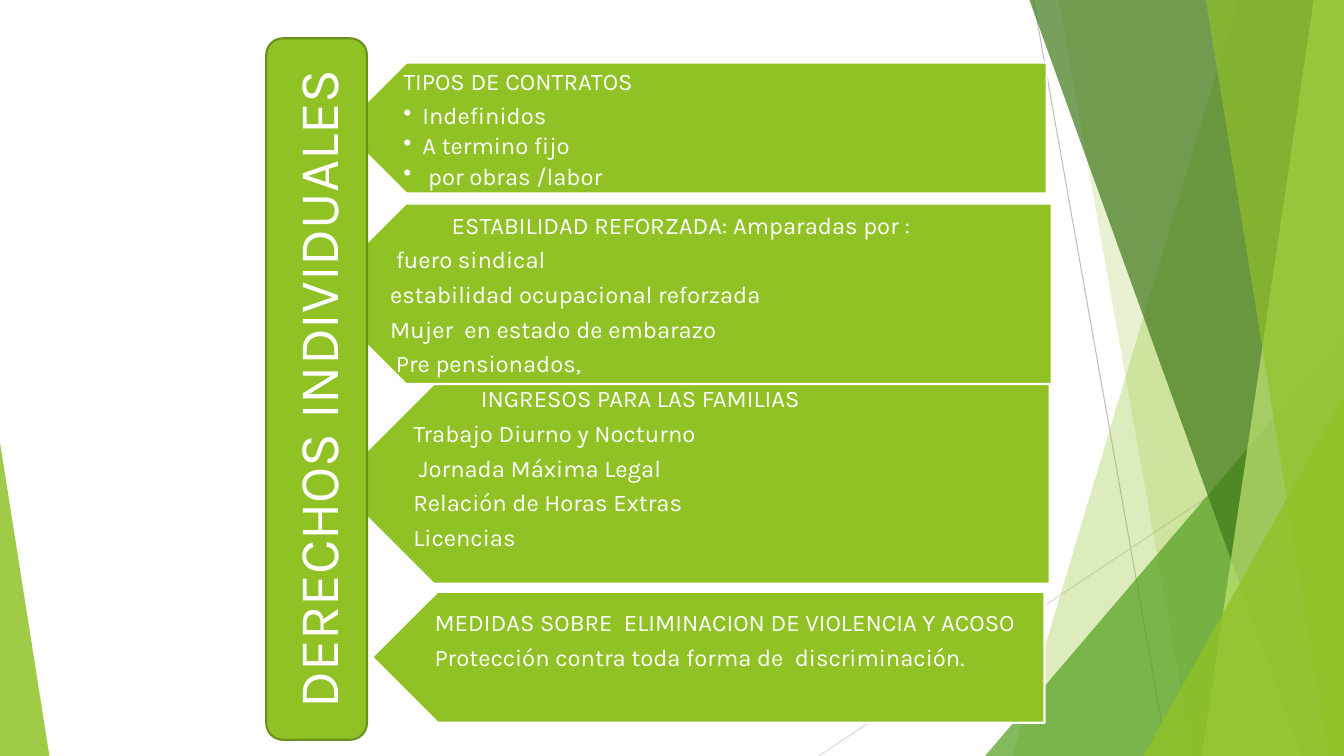
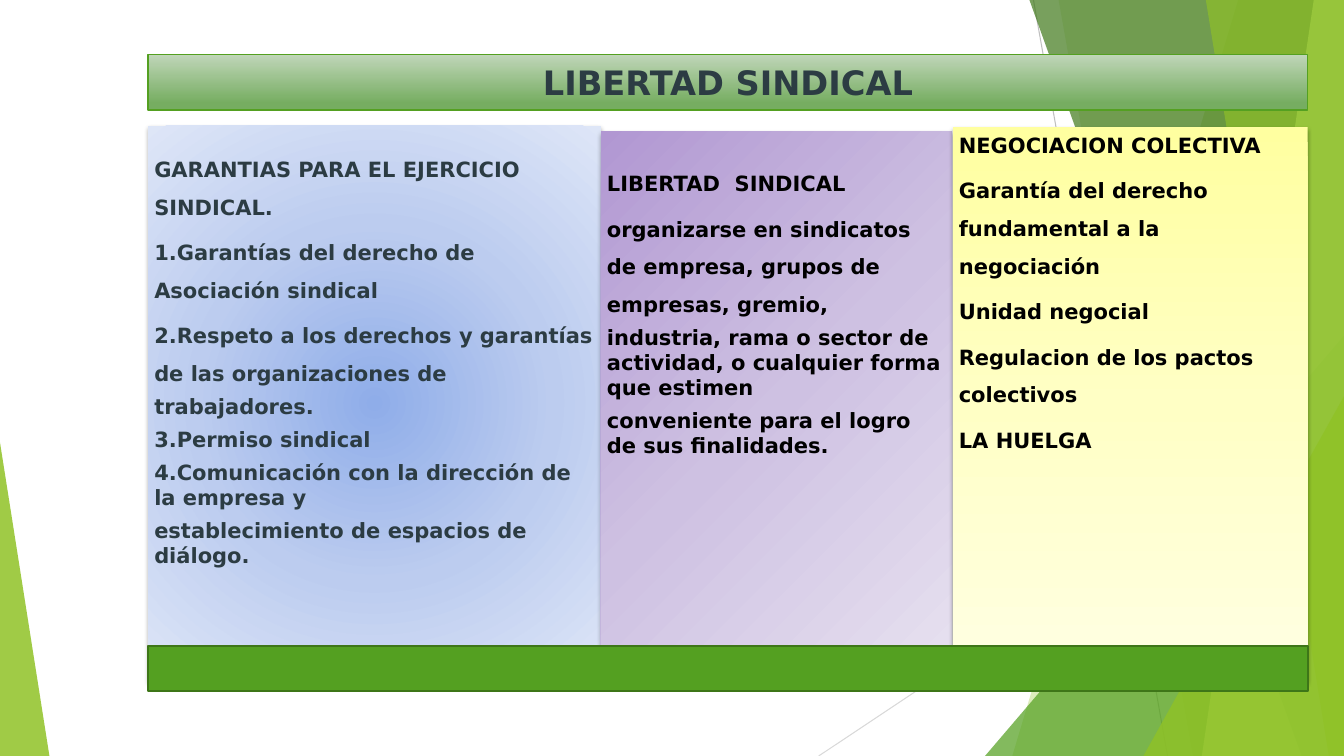
from dataclasses import dataclass
from typing import Optional

from lxml.etree import SubElement
from pptx import Presentation
from pptx.dml.color import RGBColor
from pptx.enum.shapes import MSO_CONNECTOR, MSO_SHAPE
from pptx.enum.text import MSO_ANCHOR, PP_ALIGN
from pptx.oxml import parse_xml
from pptx.oxml.ns import nsdecls, qn
from pptx.util import Inches, Pt

WIDTH, HEIGHT = 13.33, 7.5
WHITE = RGBColor(0xFF, 0xFF, 0xFF)
BLACK = RGBColor(0x00, 0x00, 0x00)
SLATE = RGBColor(0x2C, 0x3C, 0x43)
LIME = RGBColor(0x90, 0xC2, 0x26)
LIME_EDGE = RGBColor(0x6B, 0x90, 0x1C)
PALE_LIME = RGBColor(0xC0, 0xE4, 0x74)
GREEN = RGBColor(0x54, 0xA0, 0x21)
GREEN_EDGE = RGBColor(0x3E, 0x76, 0x18)
FOREST = RGBColor(0x3F, 0x78, 0x19)
GREY = RGBColor(0xBF, 0xBF, 0xBF)
PALE_GREY = RGBColor(0xD9, 0xD9, 0xD9)
RADIAL = '<a:path path="circle"><a:fillToRect l="50000" t="50000" r="50000" b="50000"/></a:path>'


@dataclass(frozen=True)
class Facet:
    """Area from a slanted left edge to the right edge of the slide."""
    top_x: float
    bottom_x: float
    colour: RGBColor
    opacity: int


@dataclass(frozen=True)
class Corner:
    """Triangle standing on the bottom edge of the slide."""
    left: float
    top: float
    width: float
    apex: float
    colour: RGBColor
    opacity: int


@dataclass(frozen=True)
class Line:
    text: str
    spacing: float = 0.9
    indent: float = 0
    bullet: bool = False


@dataclass(frozen=True)
class TextStyle:
    font: str
    size: float
    colour: RGBColor
    bold: bool = False
    after: float = 0


@dataclass(frozen=True)
class Gradient:
    stops: tuple[tuple[int, str], ...]
    angle: Optional[int] = None


@dataclass(frozen=True)
class ArrowPanel:
    left: float
    top: float
    width: float
    height: float
    text_left: float
    text_top: float
    lines: tuple[Line, ...]


@dataclass(frozen=True)
class Column:
    left: float
    top: float
    width: float
    height: float
    text_top: float
    gradient: Gradient
    colour: RGBColor
    lines: tuple[Line, ...]


BACKDROP = (
    Facet(12.28, 10.04, LIME, 30),
    Facet(10.5, 11.83, LIME, 20),
    Corner(9.77, 3.33, 3.56, 1, GREEN, 72),
    Facet(10.21, 12.91, FOREST, 70),
    Facet(13.03, 11.92, PALE_LIME, 70),
    Facet(11.96, 13.18, LIME, 65),
    Corner(11.34, 3.93, 1.99, 1, LIME, 80),
    Corner(0, 4.39, 0.49, 0, LIME, 85),
)

PANELS = (
    ArrowPanel(3.38, 0.62, 7, 1.3, 3.71, 0.62, (
        Line("TIPOS DE CONTRATOS"),
        Line("Indefinidos", bullet=True),
        Line("A termino fijo", bullet=True),
        Line(" por obras /labor", bullet=True),
    )),
    ArrowPanel(3.13, 2.02, 7.3, 1.79, 3.58, 2.05, (
        Line("ESTABILIDAD REFORZADA: Amparadas por :", indent=0.61),
        Line(" fuero sindical"),
        Line("estabilidad ocupacional reforzada"),
        Line("Mujer  en estado de embarazo"),
        Line(" Pre pensionados,"),
    )),
    ArrowPanel(3.31, 3.81, 7.1, 1.98, 3.81, 3.77, (
        Line("INGRESOS PARA LAS FAMILIAS", indent=0.67),
        Line("Trabajo Diurno y Nocturno"),
        Line(" Jornada Máxima Legal"),
        Line("Relación de Horas Extras"),
        Line("Licencias"),
    )),
    ArrowPanel(3.69, 5.87, 6.67, 1.3, 4.02, 5.99, (
        Line("MEDIDAS SOBRE  ELIMINACION DE VIOLENCIA Y ACOSO"),
        Line("Protección contra toda forma de  discriminación."),
    )),
)

TITLE_GRADIENT = Gradient(((0, "C0D6B9"), (88, "76AD61")), 90)
COLUMNS = (
    Column(1.47, 1.25, 4.49, 5.5, 1.37,
           Gradient(((0, "8FADE9"), (50, "BCCCEF"), (100, "DEE6F7"))), SLATE, (
               Line("GARANTIAS PARA EL EJERCICIO SINDICAL.", 1.5),
               Line("1.Garantías del derecho de Asociación sindical", 1.5),
               Line("2.Respeto a los derechos y garantías de las organizaciones de", 1.5),
               Line("trabajadores.", 1),
               Line("3.Permiso sindical", 1),
               Line("4.Comunicación con la dirección de la empresa y", 1),
               Line("establecimiento de espacios de diálogo.", 1),
           )),
    Column(5.96, 1.3, 3.48, 5.41, 1.51,
           Gradient(((0, "B197D2"), (50, "CEC1E2"), (100, "E7E1F0")), 45), BLACK, (
               Line("LIBERTAD  SINDICAL", 1.5),
               Line("organizarse en sindicatos de empresa, grupos de empresas, gremio,", 1.5),
               Line("industria, rama o sector de actividad, o cualquier forma que estimen", 1),
               Line("conveniente para el logro de sus finalidades.", 1),
           )),
    Column(9.45, 1.26, 3.52, 5.49, 1.13,
           Gradient(((0, "FFFFA0"), (50, "FFFFC5"), (100, "FFFFE3")), 90), BLACK, (
               Line("NEGOCIACION COLECTIVA", 1.5),
               Line("Garantía del derecho fundamental a la negociación", 1.5),
               Line("Unidad negocial", 1.5),
               Line("Regulacion de los pactos colectivos", 1.5),
               Line("LA HUELGA", 1.5),
           )),
)

PANEL_STYLE = TextStyle("Karla", 17, WHITE, after=6.4)
BANNER_STYLE = TextStyle("Karla", 40, WHITE)
TITLE_STYLE = TextStyle("DejaVu Sans", 24, SLATE, bold=True)


def paint(shape, fill: RGBColor, edge: Optional[RGBColor] = None, weight: float = 1.5) -> None:
    shape.shadow.inherit = False
    shape.fill.solid()
    shape.fill.fore_color.rgb = fill
    if edge is None:
        shape.line.fill.background()
    else:
        shape.line.color.rgb = edge
        shape.line.width = Pt(weight)


def add_block(page, kind, left: float, top: float, width: float, height: float,
              fill: RGBColor, edge: Optional[RGBColor] = None, weight: float = 1.5):
    shape = page.shapes.add_shape(kind, Inches(left), Inches(top), Inches(width), Inches(height))
    paint(shape, fill, edge, weight)
    return shape


def set_opacity(shape, percent: int) -> None:
    colour = next(shape.element.iter(qn("a:srgbClr")))
    SubElement(colour, qn("a:alpha")).set("val", str(percent * 1000))


def set_gradient(shape, gradient: Gradient) -> None:
    stops = "".join(f'<a:gs pos="{place * 1000}"><a:srgbClr val="{colour}"/></a:gs>'
                    for place, colour in gradient.stops)
    course = RADIAL if gradient.angle is None else f'<a:lin ang="{gradient.angle * 60000}" scaled="0"/>'
    solid = next(shape.element.iter(qn("a:solidFill")))
    solid.getparent().replace(solid, parse_xml(
        f'<a:gradFill {nsdecls("a")}><a:gsLst>{stops}</a:gsLst>{course}</a:gradFill>'))


def add_shadow(shape) -> None:
    effects = next(shape.element.iter(qn("a:effectLst")))
    effects.append(parse_xml(
        f'<a:outerShdw {nsdecls("a")} blurRad="{Pt(3)}" dist="{Pt(2)}" dir="5400000" rotWithShape="0">'
        '<a:srgbClr val="000000"><a:alpha val="35000"/></a:srgbClr></a:outerShdw>'))


def style_para(para, style: TextStyle) -> None:
    for span in para.runs:
        span.font.name = style.font
        span.font.size = Pt(style.size)
        span.font.bold = style.bold
        span.font.color.rgb = style.colour


def set_label(shape, text: str, style: TextStyle) -> None:
    shape.text_frame.text = text
    shape.text_frame.vertical_anchor = MSO_ANCHOR.MIDDLE
    para = shape.text_frame.paragraphs[0]
    para.alignment = PP_ALIGN.CENTER
    style_para(para, style)


def add_lines(page, left: float, top: float, width: float, height: float,
              insets: tuple[float, float, float], lines: tuple[Line, ...], style: TextStyle) -> None:
    box = page.shapes.add_textbox(Inches(left), Inches(top), Inches(width), Inches(height))
    frame = box.text_frame
    frame.word_wrap = True
    frame.margin_left, frame.margin_right = Inches(insets[0]), Inches(insets[2])
    frame.margin_top = frame.margin_bottom = Inches(insets[1])
    for number, line in enumerate(lines):
        para = frame.add_paragraph() if number else frame.paragraphs[0]
        para.text = line.text
        para.line_spacing = line.spacing
        para.space_after = Pt(3.2 if line.bullet else style.after)
        style_para(para, style)
        properties = para._p.get_or_add_pPr()
        if line.bullet:
            properties.set("marL", str(Inches(0.19)))
            properties.set("indent", str(-Inches(0.19)))
            SubElement(properties, qn("a:buChar")).set("char", "•")
        elif line.indent:
            properties.set("marL", str(Inches(line.indent)))


def add_hairline(page, start: tuple[float, float], end: tuple[float, float], colour: RGBColor):
    line = page.shapes.add_connector(MSO_CONNECTOR.STRAIGHT, *map(Inches, start + end))
    line.line.color.rgb = colour
    line.line.width = Pt(0.75)
    SubElement(line.element.spPr, qn("a:effectLst"))
    return line


def add_facet(page, facet: Facet):
    builder = page.shapes.build_freeform(Inches(facet.top_x), 0, scale=1.0)
    corners = ((WIDTH, 0), (WIDTH, HEIGHT), (facet.bottom_x, HEIGHT))
    builder.add_line_segments([(Inches(x), Inches(y)) for x, y in corners], close=True)
    shape = builder.convert_to_shape()
    paint(shape, facet.colour)
    return shape


def add_corner(page, corner: Corner):
    shape = add_block(page, MSO_SHAPE.ISOSCELES_TRIANGLE, corner.left, corner.top,
                      corner.width, HEIGHT - corner.top, corner.colour)
    shape.adjustments[0] = corner.apex
    return shape


def move_backdrop_to_layout(page, layout) -> None:
    """Draw the shared backdrop once and keep it on the layout."""
    for placeholder in list(layout.placeholders):
        layout.shapes.element.remove(placeholder.element)
    parts = [add_hairline(page, (10.25, 0), (11.58, HEIGHT), GREY),
             add_hairline(page, (WIDTH, 4.03), (8.12, HEIGHT), PALE_GREY)]
    for piece in BACKDROP:
        shape = add_facet(page, piece) if isinstance(piece, Facet) else add_corner(page, piece)
        set_opacity(shape, piece.opacity)
        parts.append(shape)
    for part in parts:
        layout.shapes.element.append(part.element)


def build_rights(page) -> None:
    # Arrow panels
    for panel in PANELS:
        arrow = add_block(page, MSO_SHAPE.PENTAGON, panel.left, panel.top,
                          panel.width, panel.height, LIME, WHITE)
        arrow.rotation = 180
        text_width = panel.left + panel.width - panel.text_left
        add_lines(page, panel.text_left, panel.text_top, text_width, panel.height,
                  (0.29, 0.07, 0.13), panel.lines, PANEL_STYLE)
    # Vertical banner
    banner = add_block(page, MSO_SHAPE.ROUNDED_RECTANGLE, 2.64, 0.38, 1, 6.96, LIME, LIME_EDGE)
    set_label(banner, "DERECHOS INDIVIDUALES", BANNER_STYLE)
    next(banner.element.iter(qn("a:bodyPr"))).set("vert", "vert270")


def build_union_freedom(page) -> None:
    # Title bar
    title = add_block(page, MSO_SHAPE.RECTANGLE, 1.47, 0.54, 11.5, 0.55, GREEN, GREEN, 1)
    set_gradient(title, TITLE_GRADIENT)
    set_label(title, "LIBERTAD SINDICAL", TITLE_STYLE)
    # Columns
    for column in COLUMNS:
        card = add_block(page, MSO_SHAPE.RECTANGLE, column.left, column.top,
                         column.width, column.height, WHITE)
        set_gradient(card, column.gradient)
        add_shadow(card)
        add_lines(page, column.left, column.text_top, column.width, column.height,
                  (0.06, 0.06, 0.06), column.lines,
                  TextStyle("DejaVu Sans", 15, column.colour, bold=True, after=5.4))
    # Base band
    add_block(page, MSO_SHAPE.RECTANGLE, 1.47, 6.41, 11.5, 0.45, GREEN, GREEN_EDGE)


def main() -> None:
    deck = Presentation()
    deck.slide_width, deck.slide_height = Inches(WIDTH), Inches(HEIGHT)
    blank = deck.slide_layouts[6]
    rights, freedom = (deck.slides.add_slide(blank) for _ in range(2))
    move_backdrop_to_layout(rights, blank)
    build_rights(rights)
    build_union_freedom(freedom)
    deck.save("out.pptx")


if __name__ == "__main__":
    main()
